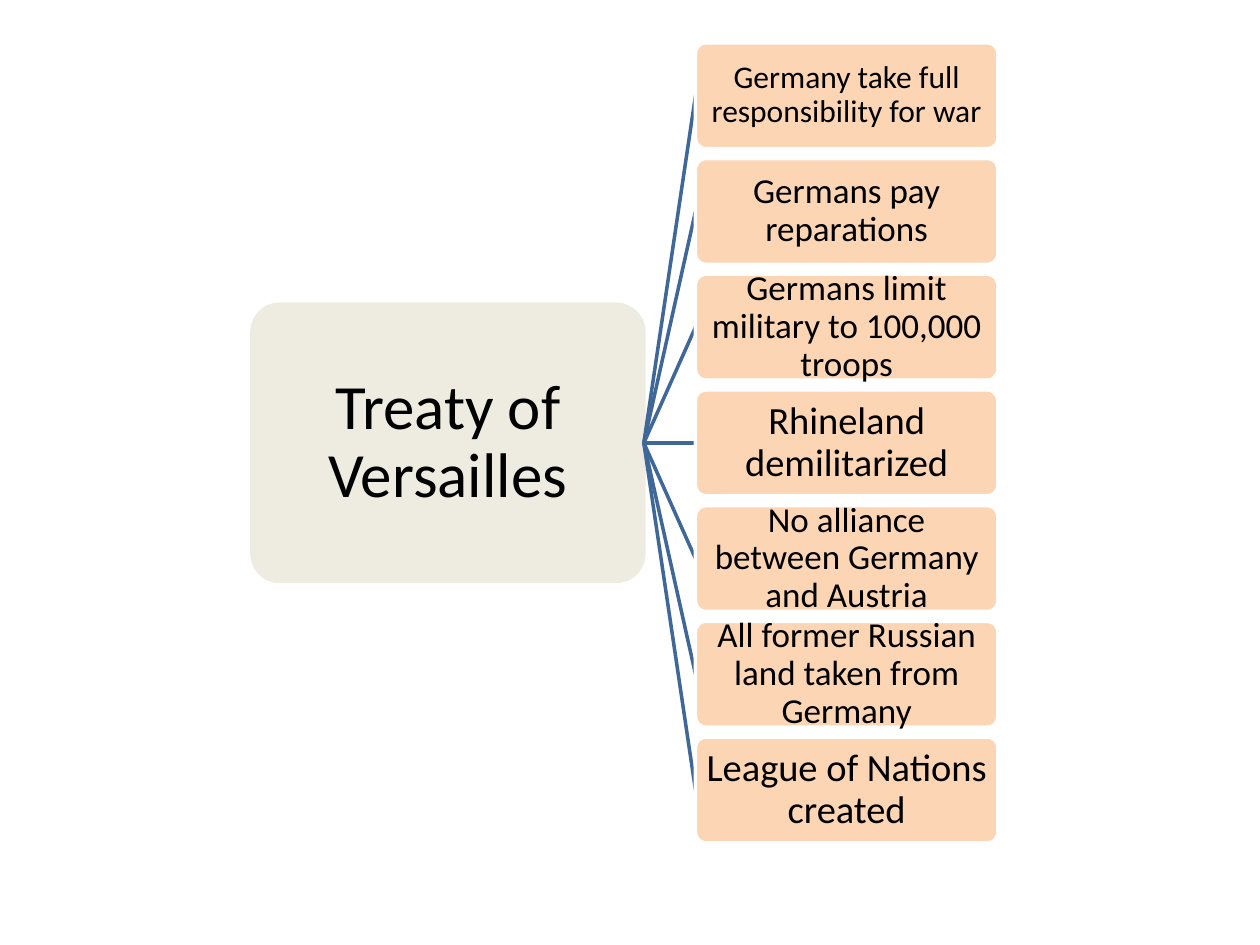
from lxml import etree
from pptx import Presentation
from pptx import util as u
from pptx.dml.color import RGBColor
from pptx.enum import shapes, text
from pptx.oxml import ns

PX = 9144
FONT = "Calibri"
TERMS = [
    ("Germany take full responsibility for war", 18),
    ("Germans pay reparations", 20),
    ("Germans limit military to 100,000 troops", 20),
    ("Rhineland demilitarized", 22),
    ("No alliance between Germany and Austria", 20),
    ("All former Russian land taken from Germany", 20),
    ("League of Nations created", 22),
]


def px(n):
    return u.Emu(round(n * PX))


def color(value):
    return RGBColor.from_string(value)


def add_node(s, box, label, size, fill, line, margin):
    sp = s.shapes.add_shape(shapes.MSO_SHAPE.ROUNDED_RECTANGLE, *map(px, box))
    sp.adjustments[0] = 0.1
    sp.shadow.inherit = False
    sp.fill.solid()
    sp.fill.fore_color.rgb = color(fill)
    sp.line.color.rgb = color(line)
    sp.line.width = u.Pt(2)
    tf = sp.text_frame
    tf.word_wrap = True
    tf.vertical_anchor = text.MSO_ANCHOR.MIDDLE
    tf.margin_left = tf.margin_right = px(margin)
    tf.margin_top = tf.margin_bottom = px(margin)
    p = tf.paragraphs[0]
    p.text = label
    p.alignment = text.PP_ALIGN.CENTER
    p.line_spacing = 0.9
    p.font.name = FONT
    p.font.size = u.Pt(size)
    p.font.color.rgb = color("000000")


def add_branch(s, start, end):
    c = s.shapes.add_connector(shapes.MSO_CONNECTOR.STRAIGHT, *map(px, start + end))
    c.line.color.rgb = color("3F6797")
    c.line.width = u.Pt(2)
    etree.SubElement(c._element.spPr, ns.qn("a:effectLst"))


def add_tree(s, box, root_size, term_size):
    left, top, width, height = box
    root_w, root_h = root_size
    term_w, term_h = term_size
    middle = top + height / 2
    term_left = left + width - term_w
    step = (height - term_h) / (len(TERMS) - 1)
    add_node(s, (left, middle - root_h / 2, root_w, root_h),
             "Treaty of Versailles", 36, "EEECE1", "EEECE1", 10)
    for i, (label, size) in enumerate(TERMS):
        y = top + i * step
        add_branch(s, (left + root_w, middle), (term_left, y + term_h / 2))
        add_node(s, (term_left, y, term_w, term_h), label, size,
                 "FCD5B5", "FFFFFF", 3)


def main():
    prs = Presentation()
    prs.slide_width, prs.slide_height = px(1000), px(750)
    s = prs.slides.add_slide(prs.slide_layouts[6])
    add_tree(s, (200, 34, 592, 635), (311, 220), (240, 84))
    prs.save("out.pptx")


if __name__ == "__main__":
    main()
